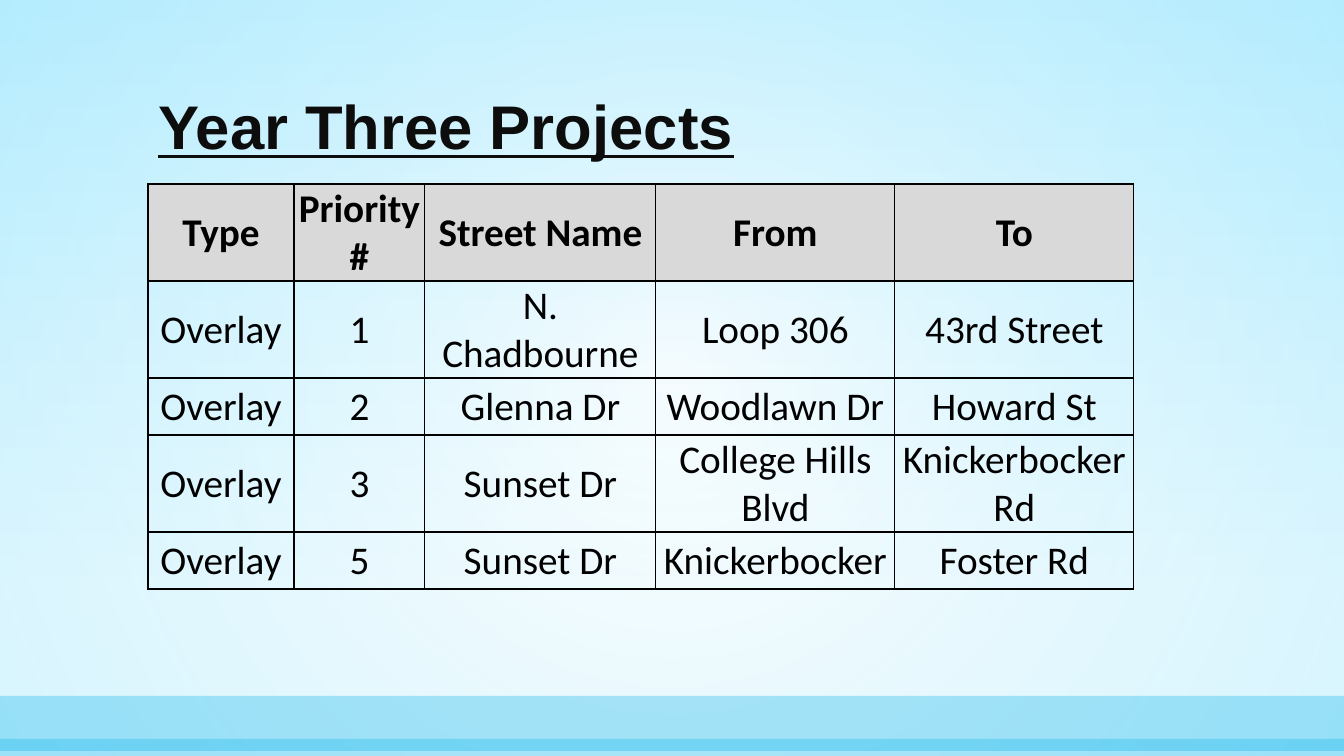
import pptx
import pptx.util
import pptx.dml.color
import pptx.enum.text
import pptx.enum.shapes
import pptx.oxml
import pptx.oxml.ns

RGB = pptx.dml.color.RGBColor
ANCHOR = pptx.enum.text.MSO_ANCHOR
ALIGN = pptx.enum.text.PP_ALIGN
qn = pptx.oxml.ns.qn
NS = pptx.oxml.ns.nsdecls("a")

BLACK = RGB(0x00, 0x00, 0x00)
INK = RGB(0x0D, 0x0D, 0x0D)
WHITE = RGB(0xFF, 0xFF, 0xFF)
HEADER_GREY = RGB(0xD9, 0xD9, 0xD9)
PALE_BLUE = RGB(0xC8, 0xF1, 0xFF)
GLOW_BLUE = RGB(0x91, 0xE4, 0xFF)
BAND_BLUE = RGB(0x00, 0xB0, 0xEA)

WIDTH, HEIGHT = 1344, 756
COLUMNS = [146, 131, 231, 239, 239]
ROW_HEIGHTS = [97, 97, 57, 97, 57]
PROJECTS = [
    ["Type", "Priority #", "Street Name", "From", "To"],
    ["Overlay", "1", "N. Chadbourne", "Loop 306", "43rd Street"],
    ["Overlay", "2", "Glenna Dr", "Woodlawn Dr", "Howard St"],
    ["Overlay", "3", "Sunset Dr", "College Hills Blvd", "Knickerbocker Rd"],
    ["Overlay", "5", "Sunset Dr", "Knickerbocker", "Foster Rd"],
]


def px(n):
    return pptx.util.Emu(round(n * 914400 / 100.8))


def write(tf, text, *, font, size, color, bold=False, underline=False,
          align=ALIGN.LEFT, spacing=1.0):
    p = tf.paragraphs[0]
    p.alignment = align
    p.line_spacing = spacing
    r = p.add_run()
    r.text = text
    r.font.name = font
    r.font.size = pptx.util.Pt(size)
    r.font.color.rgb = color
    r.font.bold = bold
    r.font.underline = underline


def set_alpha(color_element, percent):
    color_element.append(pptx.oxml.parse_xml(
        f'<a:alpha {NS} val="{percent * 1000}"/>'))


class SlideBuilder:
    title_style = dict(font="Arial", size=44, color=INK, bold=True,
                       underline=True, spacing=0.9)
    cell_style = dict(font="Calibri", size=28, color=BLACK, align=ALIGN.CENTER)

    def __init__(self, prs):
        self.s = prs.slides.add_slide(prs.slide_layouts[5])

    def gradient(self, fill, stops):
        fill.gradient()
        fill.gradient_angle = 270
        for stop, (position, color) in zip(fill.gradient_stops, stops):
            stop.position = position
            stop.color.rgb = color

    def background(self, stops):
        self.gradient(self.s.background.fill, stops)

    def rect(self, x, y, w, h):
        sp = self.s.shapes.add_shape(
            pptx.enum.shapes.MSO_SHAPE.RECTANGLE, px(x), px(y), px(w), px(h))
        sp.shadow.inherit = False
        sp.line.fill.background()
        return sp

    def glow(self, stops, alphas):
        sp = self.rect(0, 0, WIDTH, HEIGHT)
        self.gradient(sp.fill, stops)
        grad = sp.element.spPr.find(qn("a:gradFill"))
        for color, alpha in zip(grad.iter(qn("a:srgbClr")), alphas):
            set_alpha(color, alpha)
        linear = grad.find(qn("a:lin"))
        grad.replace(linear, pptx.oxml.parse_xml(
            f'<a:path {NS} path="circle"><a:fillToRect l="50000" t="50000" '
            'r="50000" b="50000"/></a:path>'))

    def band(self, y, h, alpha):
        sp = self.rect(0, y, WIDTH, h)
        sp.fill.solid()
        sp.fill.fore_color.rgb = BAND_BLUE
        set_alpha(next(sp.element.spPr.iter(qn("a:srgbClr"))), alpha)

    def title(self, text, x, y, w, h):
        sp = self.s.shapes.title
        self.s.shapes.element.append(sp.element)  # bring in front of the backdrop
        sp.left, sp.top, sp.width, sp.height = px(x), px(y), px(w), px(h)
        tf = sp.text_frame
        tf.word_wrap = True
        tf.auto_size = pptx.enum.text.MSO_AUTO_SIZE.NONE
        tf.vertical_anchor = ANCHOR.BOTTOM
        write(tf, text, **self.title_style)

    def cell(self, cell, text, header):
        cell.margin_left = cell.margin_right = cell.margin_top = px(1)
        cell.margin_bottom = 0
        cell.vertical_anchor = ANCHOR.MIDDLE
        if header:
            cell.fill.solid()
            cell.fill.fore_color.rgb = HEADER_GREY
        else:
            cell.fill.background()
        write(cell.text_frame, text, bold=header, **self.cell_style)
        # Borders come before the fill in the cell properties
        tcPr = cell.text_frame._txBody.getparent().get_or_add_tcPr()
        for i, side in enumerate("LRTB"):
            tcPr.insert(i, pptx.oxml.parse_xml(
                f'<a:ln{side} {NS} w="12700"><a:solidFill>'
                f'<a:srgbClr val="{BLACK}"/></a:solidFill></a:ln{side}>'))

    def table(self, rows, x, y, widths, heights):
        table = self.s.shapes.add_table(
            len(rows), len(widths), px(x), px(y),
            px(sum(widths)), px(sum(heights))).table
        table.horz_banding = False
        table.first_row = False
        for column, w in zip(table.columns, widths):
            column.width = px(w)
        for row, h, texts in zip(table.rows, heights, rows):
            row.height = px(h)
            for cell, text in zip(row.cells, texts):
                self.cell(cell, text, header=texts is rows[0])


def main():
    prs = pptx.Presentation()
    prs.slide_width, prs.slide_height = px(WIDTH), px(HEIGHT)
    slide = SlideBuilder(prs)

    # Backdrop
    slide.background([(0, PALE_BLUE), (0.79, WHITE)])
    slide.glow([(0, WHITE), (1, GLOW_BLUE)], alphas=[49, 35])
    slide.band(696, 55, alpha=30)
    slide.band(739, 17, alpha=28)

    # Title and project table
    slide.title("Year Three Projects", 148, 48, 1048, 120)
    slide.table(PROJECTS, 148, 184, COLUMNS, ROW_HEIGHTS)

    prs.save("out.pptx")


if __name__ == "__main__":
    main()
